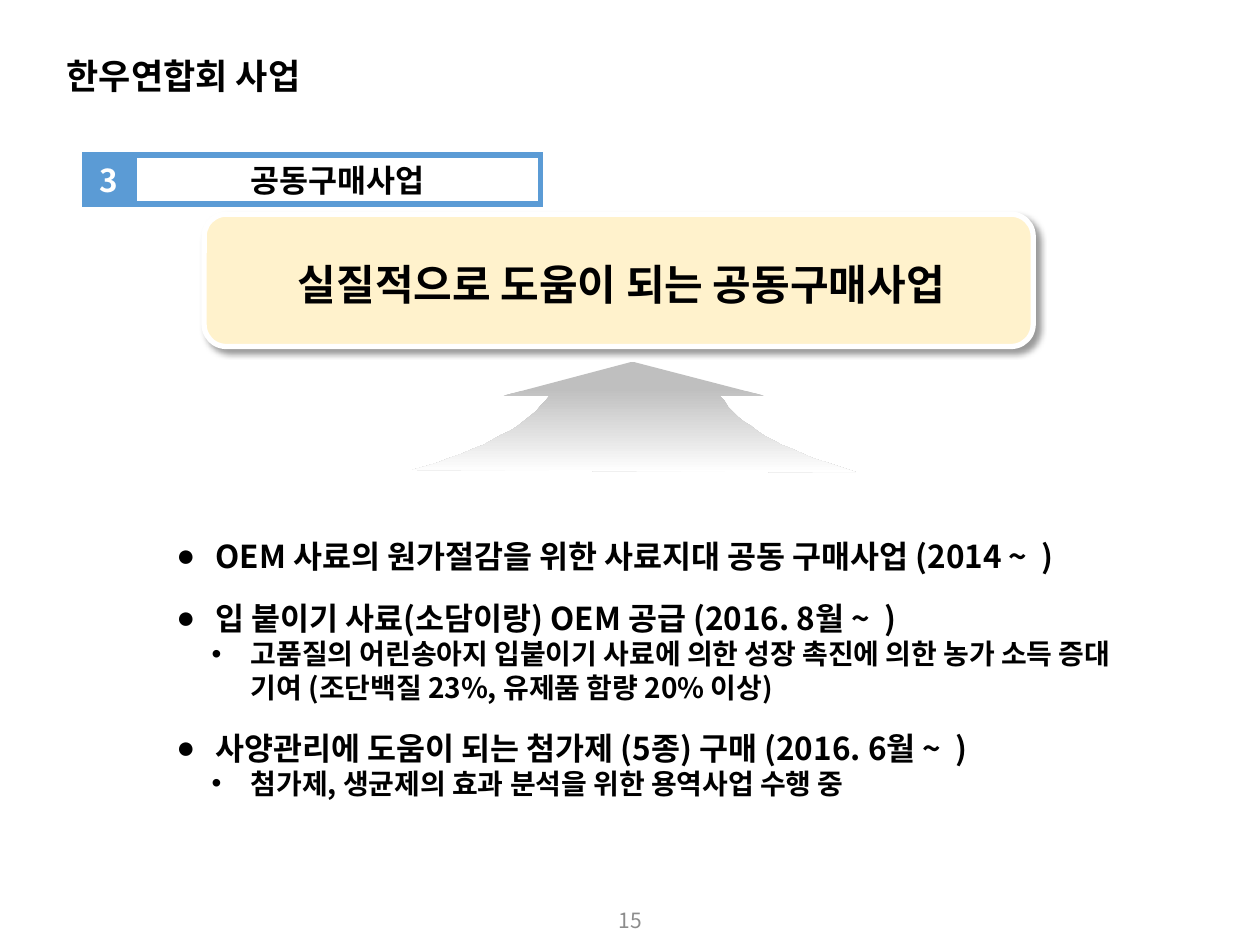
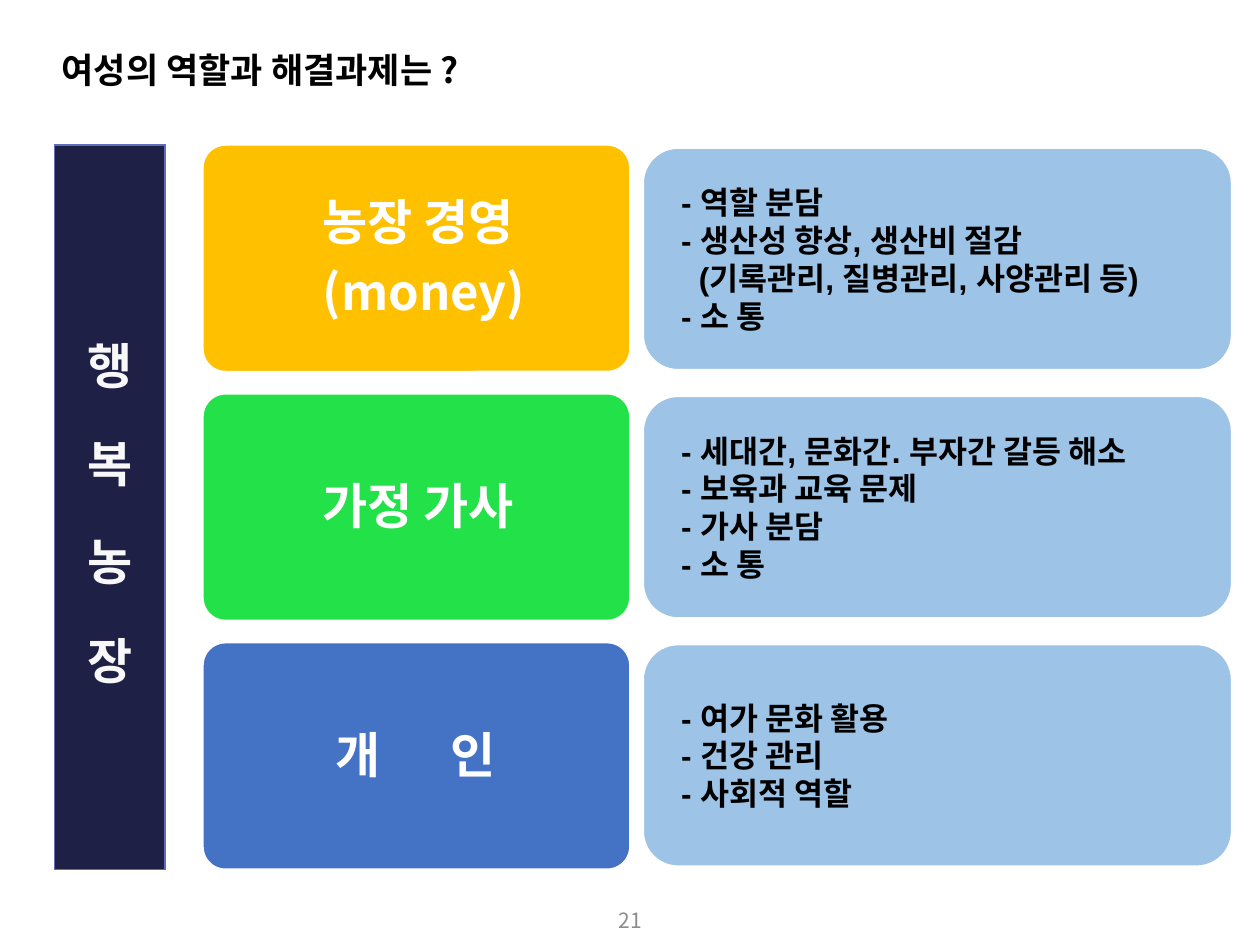
from lxml.etree import SubElement
from pptx import Presentation
from pptx.dml.color import RGBColor
from pptx.enum.shapes import MSO_SHAPE
from pptx.enum.text import MSO_ANCHOR, PP_ALIGN
from pptx.oxml.ns import qn
from pptx.util import Inches, Pt

FONT = "Noto Sans CJK KR"
BLACK = RGBColor(0x00, 0x00, 0x00)
WHITE = RGBColor(0xFF, 0xFF, 0xFF)
OFF_WHITE = RGBColor(0xF8, 0xF8, 0xF8)
GREY = RGBColor(0x8C, 0x8C, 0x8C)
SILVER = RGBColor(0xBF, 0xBF, 0xBF)
BLUE = RGBColor(0x5B, 0x9B, 0xD5)
PALE_BLUE = RGBColor(0x9D, 0xC3, 0xE6)
CREAM = RGBColor(0xFF, 0xF2, 0xCC)
NAVY = RGBColor(0x1F, 0x20, 0x46)
PERIWINKLE = RGBColor(0x60, 0x6D, 0xB8)
AMBER = RGBColor(0xFF, 0xC0, 0x00)
GREEN = RGBColor(0x23, 0xE1, 0x48)
ROYAL = RGBColor(0x44, 0x72, 0xC4)


def write(tf, lines, size, color, bold=True, font=FONT, **para):
    tf.word_wrap = True
    tf.vertical_anchor = MSO_ANCHOR.MIDDLE
    for i, line in enumerate(lines):
        p = tf.paragraphs[0] if i == 0 else tf.add_paragraph()
        for name, value in para.items():
            if i or name != "space_before":
                setattr(p, name, value)
        r = p.add_run()
        r.text = line
        for name, value in {"size": Pt(size), "bold": bold, "name": font}.items():
            setattr(r.font, name, value)
        r.font.color.rgb = color
        SubElement(r.font._element, qn("a:ea"), typeface=FONT)


def box(s, kind, place, fill, line, width):
    sp = s.shapes.add_shape(kind, *map(Inches, place))
    sp.shadow.inherit = False
    if fill is None:
        sp.fill.background()
    else:
        sp.fill.solid()
        sp.fill.fore_color.rgb = fill
    sp.line.color.rgb = line
    sp.line.width = Pt(width)
    SubElement(sp._element.spPr.find(qn("a:ln")), qn("a:miter"), lim="800000")
    return sp


prs = Presentation()
prs.slide_width, prs.slide_height = Inches(10), Inches(7.5)

pages = [
    (1, "한우연합회 사업", (0.43, 0.41, 7.56, 0.42), 0.9, "15"),
    (5, "여성의 역할과 해결과제는 ?", (0.39, 0.22, 7.01, 0.67), 1.0, "21"),
]
for layout, title, place, spacing, number in pages:
    s = prs.slides.add_slide(prs.slide_layouts[layout])
    sp = s.shapes.title
    sp.left, sp.top, sp.width, sp.height = map(Inches, place)
    write(sp.text_frame, [title], 20, BLACK, alignment=PP_ALIGN.LEFT, line_spacing=spacing)
    sp = s.shapes.add_textbox(*map(Inches, (3.88, 7.1, 2.25, 0.4)))
    write(sp.text_frame, [number], 12, GREY, bold=False, alignment=PP_ALIGN.CENTER)

s = prs.slides[0]
for place, fill, text, color in [
    ((0.67, 1.23, 0.39, 0.39), BLUE, "3", WHITE),
    ((1.07, 1.23, 3.22, 0.39), None, "공동구매사업", BLACK),
]:
    sp = box(s, MSO_SHAPE.RECTANGLE, place, fill, BLUE, 3)
    write(sp.text_frame, [text], 18, color, alignment=PP_ALIGN.CENTER)

sp = box(s, MSO_SHAPE.ROUNDED_RECTANGLE, (1.62, 1.7, 6.58, 1.05), CREAM, WHITE, 3)
sp.text_frame.margin_top = Inches(0.1)
sp.text_frame.margin_left = Inches(0.14)
write(sp.text_frame, ["실질적으로 도움이 되는 공동구매사업"], 24, BLACK, alignment=PP_ALIGN.CENTER)
effects = sp._element.spPr.find(qn("a:effectLst"))
shadow = SubElement(effects, qn("a:outerShdw"), blurRad=str(Pt(4)), dist=str(Pt(3)),
                    dir="2700000", algn="tl", rotWithShape="0")
tint = SubElement(shadow, qn("a:srgbClr"), val="000000")
SubElement(tint, qn("a:alpha"), val="40000")

right_curve = [(680, 375), (611, 354), (590, 338), (571, 314)]
left_curve = [(436, 314), (421, 335), (387, 357), (327, 373)]
outline = []
for curve in (right_curve, left_curve):
    for step in range(17):
        t = step / 16
        weights = ((1 - t) ** 3, 3 * t * (1 - t) ** 2, 3 * t * t * (1 - t), t ** 3)
        outline.append(tuple(sum(w * pt[axis] for w, pt in zip(weights, curve)) for axis in (0, 1)))
    if curve is right_curve:
        outline += [(606, 314), (502, 287), (400, 314)]
arrow = s.shapes.build_freeform(*outline[0], scale=Inches(0.01))
arrow.add_line_segments(outline[1:], close=True)
sp = arrow.convert_to_shape()
sp.shadow.inherit = False
sp.line.fill.background()
sp.fill.gradient()
sp.fill.gradient_angle = 270
for stop, position, color in zip(sp.fill.gradient_stops, (0.24, 1), (SILVER, WHITE)):
    stop.position = position
    stop.color.rgb = color

projects = [
    (0, "OEM 사료의 원가절감을 위한 사료지대 공동 구매사업 (2014 ~  )"),
    (0, "입 붙이기 사료(소담이랑) OEM 공급 (2016. 8월 ~  )"),
    (1, "고품질의 어린송아지 입붙이기 사료에 의한 성장 촉진에 의한 농가 소득 증대 기여 "
        "(조단백질 23%, 유제품 함량 20% 이상)"),
    (0, "사양관리에 도움이 되는 첨가제 (5종) 구매 (2016. 6월 ~  )"),
    (1, "첨가제, 생균제의 효과 분석을 위한 용역사업 수행 중"),
]
sp = s.placeholders[1]
sp.left, sp.top, sp.width, sp.height = map(Inches, (1.3, 4.21, 7.9, 2.22))
tf = sp.text_frame
write(tf, [text for level, text in projects], 18, BLACK)
tf.vertical_anchor = MSO_ANCHOR.TOP
for i, (p, (level, text)) in enumerate(zip(tf.paragraphs, projects)):
    p.level = level
    p.space_before = Pt(14 if i and level == 0 else 0)
    p.runs[0].font.size = Pt((18, 16)[level])
    pPr = p._p.get_or_add_pPr()
    pPr.set("marL", str(Inches((0.31, 0.59)[level])))
    pPr.set("indent", str(Inches(-0.31)))
    SubElement(pPr, qn("a:buChar"), char="●•"[level])

s = prs.slides[1]
sp = box(s, MSO_SHAPE.RECTANGLE, (0.43, 1.15, 0.88, 5.75), NAVY, PERIWINKLE, 0.75)
sp.text_frame.margin_top = Inches(0.13)
write(sp.text_frame, "행복농장", 28, OFF_WHITE, alignment=PP_ALIGN.CENTER, space_before=Pt(22.5))

roles = [
    (AMBER, ["농장 경영", "(money)"],
     ["- 역할 분담", "- 생산성 향상, 생산비 절감", "(기록관리, 질병관리, 사양관리 등)", "- 소 통"]),
    (GREEN, ["가정 가사"],
     ["- 세대간, 문화간. 부자간 갈등 해소", "- 보육과 교육 문제", "- 가사 분담", "- 소 통"]),
    (ROYAL, ["개\t인"], ["- 여가 문화 활용", "- 건강 관리", "- 사회적 역할"]),
]
for i, (fill, names, tasks) in enumerate(roles):
    place = (1.61, 1.15 + 1.975 * i, 3.39, 1.8)
    sp = box(s, MSO_SHAPE.ROUNDED_RECTANGLE, place, fill, WHITE, 1)
    sp.adjustments[0] = 0.1
    tf = sp.text_frame
    tf.margin_left = Inches(0.9)
    tf.margin_top = Inches(0.07)
    write(tf, names, 28, WHITE, alignment=PP_ALIGN.LEFT, line_spacing=0.9, space_after=Pt(10))
    if "\t" in names[0]:
        tf.margin_left = Inches(1)
        tabs = SubElement(tf.paragraphs[0]._p.get_or_add_pPr(), qn("a:tabLst"))
        SubElement(tabs, qn("a:tab"), pos=str(Inches(0.91)), algn="l")

    place = (5.08, 1.15 + 1.97 * i, 4.72, 1.81)
    sp = box(s, MSO_SHAPE.ROUNDED_RECTANGLE, place, PALE_BLUE, WHITE, 4.5)
    write(sp.text_frame, tasks, 18, BLACK, font="Arial", alignment=PP_ALIGN.LEFT)
    for p in sp.text_frame.paragraphs:
        indent = 0.14 if p.text.startswith("-") else 0.28
        p._p.get_or_add_pPr().set("marL", str(Inches(indent)))

prs.save("out.pptx")
